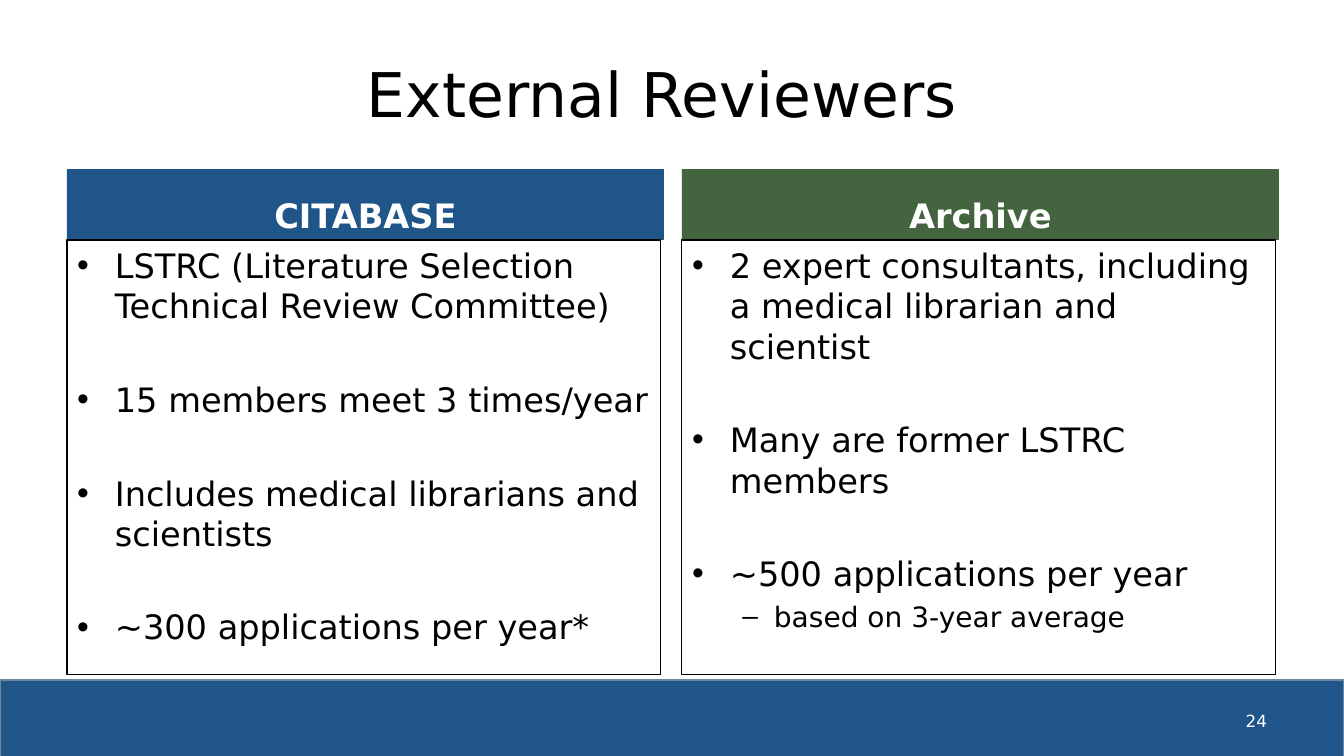
import pptx
import pptx.dml.color
import pptx.enum.shapes
import pptx.enum.text
import pptx.util

EMU_PER_PX = 914400 / 100.8
FONT = "DejaVu Sans"
BLUE, GREEN, GREY = "20558A", "44633F", "6D879B"
BLACK, WHITE = "000000", "FFFFFF"
ALIGN = pptx.enum.text.PP_ALIGN
ANCHOR = pptx.enum.text.MSO_ANCHOR

HEADER_HEIGHT = 71
COLUMNS = [
    ("CITABASE", BLUE, [
        ("LSTRC (Literature Selection Technical Review Committee)", 0),
        ("15 members meet 3 times/year", 0),
        ("Includes medical librarians and scientists", 0),
        ("~300 applications per year*", 0),
    ]),
    ("Archive", GREEN, [
        ("2 expert consultants, including a medical librarian and scientist", 0),
        ("Many are former LSTRC members", 0),
        ("~500 applications per year", 0),
        ("based on 3-year average", 1),
    ]),
]


def px(length):
    return pptx.util.Emu(round(length * EMU_PER_PX))


def color(value):
    return pptx.dml.color.RGBColor.from_string(value)


def place(shape, left, top, width, height):
    shape.left, shape.top = px(left), px(top)
    shape.width, shape.height = px(width), px(height)


def fill(shape, value):
    shape.fill.solid()
    shape.fill.fore_color.rgb = color(value)


def outline(shape, value, points):
    shape.line.color.rgb = color(value)
    shape.line.width = pptx.util.Pt(points)


def format_frame(frame, anchor):
    frame.word_wrap = True
    frame.auto_size = pptx.enum.text.MSO_AUTO_SIZE.NONE
    frame.vertical_anchor = anchor


def format_runs(para, size, value, bold=False):
    for span in para.runs:
        span.font.name = FONT
        span.font.size = pptx.util.Pt(size)
        span.font.color.rgb = color(value)
        span.font.bold = bold


def write_line(shape, text, size, value, align, anchor, bold=False):
    format_frame(shape.text_frame, anchor)
    shape.text_frame.text = text
    para = shape.text_frame.paragraphs[0]
    para.alignment = align
    para.space_before = pptx.util.Pt(0)
    format_runs(para, size, value, bold)


def add_footer(page, left, top, width, height):
    bar = page.shapes.add_shape(
        pptx.enum.shapes.MSO_SHAPE.RECTANGLE,
        px(left), px(top), px(width), px(height))
    bar.shadow.inherit = False
    fill(bar, BLUE)
    outline(bar, GREY, 2)
    number = page.shapes.add_textbox(
        px(left + 964), px(top + 21), px(313), px(40))
    write_line(number, "24", 12, WHITE, ALIGN.RIGHT, ANCHOR.MIDDLE)


def fill_title(title, left, top, width, height):
    place(title, left, top, width, height)
    write_line(title, "External Reviewers ", 44, BLACK, ALIGN.CENTER, ANCHOR.MIDDLE)


def fill_list(body, items):
    """Write bullets, with a wide gap before each later top-level one."""
    format_frame(body.text_frame, ANCHOR.TOP)
    for index, (text, level) in enumerate(items):
        frame = body.text_frame
        para = frame.add_paragraph() if index else frame.paragraphs[0]
        para.text = text
        para.level = level
        gap = 0 if index == 0 else 4 if level else 38
        para.space_before = pptx.util.Pt(gap)
        format_runs(para, 20 if level else 24, BLACK)


def fill_column(header, body, column, left, top, width, height):
    name, header_color, items = column
    place(header, left, top, width, HEADER_HEIGHT)
    fill(header, header_color)
    write_line(header, name, 24, WHITE, ALIGN.CENTER, ANCHOR.BOTTOM, bold=True)
    place(body, left, top + HEADER_HEIGHT, width - 3, height - HEADER_HEIGHT)
    outline(body, BLACK, 0.75)
    fill_list(body, items)


def main():
    deck = pptx.Presentation()
    deck.slide_width, deck.slide_height = px(1344), px(756)
    page = deck.slides.add_slide(deck.slide_layouts.get_by_name("Comparison"))
    fill_title(page.shapes.title, 67, 30, 1210, 126)
    parts = list(page.placeholders)[1:]
    for index, column in enumerate(COLUMNS):
        header, body = parts[2 * index:2 * index + 2]
        fill_column(header, body, column, 67 + 615 * index, 169, 597, 506)
    add_footer(page, 0, 680, 1344, 84)
    deck.save("out.pptx")


if __name__ == "__main__":
    main()
